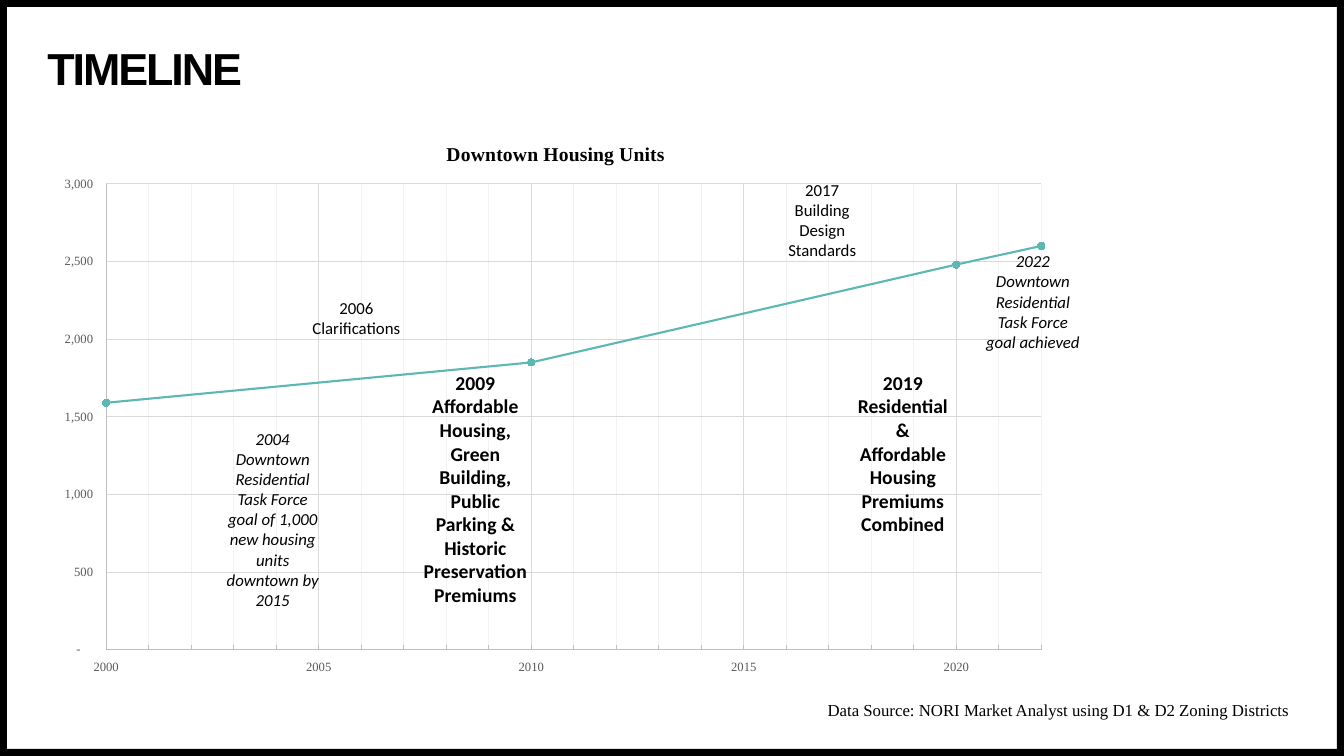
from pptx import Presentation
from pptx.chart.data import XyChartData
from pptx.dml.color import RGBColor
from pptx.enum.chart import XL_CHART_TYPE, XL_MARKER_STYLE, XL_TICK_LABEL_POSITION, XL_TICK_MARK
from pptx.enum.shapes import MSO_SHAPE
from pptx.enum.text import MSO_ANCHOR, PP_ALIGN
from pptx.oxml import parse_xml
from pptx.oxml.ns import nsdecls, qn
from pptx.util import Inches, Pt

COLORS = {
    "ink": "000000", "paper": "FFFFFF", "teal": "5CB8B3", "label": "595959",
    "axis": "BFBFBF", "grid": "D9D9D9", "minor_grid": "F2F2F2",
}
SERIF = "Times New Roman"
UNITS = [(2000, 1590), (2010, 1850), (2020, 2480), (2022, 2600)]

# Box, point size, bold, italic, paragraphs
MILESTONES = [
    ((2.97, 2.9, 1.13, 0.5), 12, False, False, ["2006", "Clarifications"]),
    ((4.1, 3.63, 1.23, 2.46), 14, True, False,
     ["2009", "Affordable Housing, Green Building, Public Parking & Historic Preservation",
      "Premiums"]),
    ((7.59, 1.73, 1.13, 0.91), 12, False, False, ["2017", "Building Design Standards"]),
    ((8.34, 3.63, 1.23, 1.75), 14, True, False,
     ["2019", "Residential & Affordable Housing", "Premiums", "Combined"]),
    ((2.14, 4.2, 1.13, 1.92), 12, False, True,
     ["2004", "Downtown Residential Task Force goal of 1,000 new housing units downtown by 2015"]),
    ((9.68, 2.44, 1.13, 1.31), 12, False, True,
     ["2022", "Downtown Residential Task Force goal achieved"]),
]


def color(name):
    return RGBColor.from_string(COLORS[name])


def inches(box):
    return [Inches(length) for length in box]


def style_font(font, name, size, tone="ink", bold=False, italic=False):
    font.name, font.size, font.bold, font.italic = name, Pt(size), bold, italic
    font.color.rgb = color(tone)


def style_line(line, tone, width=0.75):
    line.color.rgb = color(tone)
    line.width = Pt(width)


def add_border(page, box, thickness=0.07):
    left, top, width, height = box
    edges = [
        (left, top, width, thickness),
        (left, top + height - thickness, width, thickness),
        (left, top, thickness, height),
        (left + width - thickness, top, thickness, height),
    ]
    for edge in edges:
        bar = page.shapes.add_shape(MSO_SHAPE.RECTANGLE, *inches(edge))
        bar.shadow.inherit = False
        bar.fill.solid()
        bar.fill.fore_color.rgb = color("ink")
        bar.line.fill.background()


def add_title(page, box, text):
    title = page.shapes.title
    title.left, title.top, title.width, title.height = inches(box)
    frame = title.text_frame
    frame.margin_left = frame.margin_right = frame.margin_top = frame.margin_bottom = 0
    frame.vertical_anchor = MSO_ANCHOR.MIDDLE
    para = frame.paragraphs[0]
    para.alignment = PP_ALIGN.LEFT
    para.line_spacing = 0.9
    span = para.add_run()
    span.text = text
    style_font(span.font, "Arial", 32, bold=True)
    span._r.get_or_add_rPr().set("spc", "-150")


def add_text(page, box, lines, font, size, bold=False, italic=False, align=PP_ALIGN.CENTER):
    frame = page.shapes.add_textbox(*inches(box)).text_frame
    frame.word_wrap = True
    for index, line in enumerate(lines):
        para = frame.paragraphs[0] if index == 0 else frame.add_paragraph()
        para.alignment = align
        span = para.add_run()
        span.text = line
        style_font(span.font, font, size, bold=bold, italic=italic)


def layout_xml(target, **lengths):
    """Fixed layout in fractions of the chart area."""
    modes = "".join(f'<c:{axis}Mode val="edge"/>' for axis in "xy")
    values = "".join(f'<c:{key} val="{value}"/>' for key, value in lengths.items())
    return parse_xml(f'<c:layout {nsdecls("c")}><c:manualLayout>{target}{modes}{values}'
                     "</c:manualLayout></c:layout>")


def set_layout(parent, position, layout):
    for old in parent.findall(layout.tag):
        parent.remove(old)
    parent.insert(position, layout)


def add_minor_grid(axis, tone):
    axis.has_minor_gridlines = True
    axis._element.find(qn("c:minorGridlines")).append(parse_xml(
        f'<c:spPr {nsdecls("c", "a")}><a:ln w="{Pt(0.75)}"><a:solidFill>'
        f'<a:srgbClr val="{COLORS[tone]}"/></a:solidFill></a:ln></c:spPr>'))


def style_axis(axis, low, high, step, number_format):
    axis.minimum_scale, axis.maximum_scale, axis.major_unit = low, high, step
    axis.major_tick_mark = axis.minor_tick_mark = XL_TICK_MARK.NONE
    axis.tick_label_position = XL_TICK_LABEL_POSITION.LOW
    axis.has_major_gridlines = True
    style_line(axis.major_gridlines.format.line, "grid")
    style_line(axis.format.line, "axis")
    style_font(axis.tick_labels.font, SERIF, 9, "label")
    axis.tick_labels.number_format = number_format
    axis.tick_labels.number_format_is_linked = False


def add_housing_chart(page, box):
    data = XyChartData()
    points = data.add_series("Series 1")
    for year, units in UNITS:
        points.add_data_point(year, units)
    chart = page.shapes.add_chart(XL_CHART_TYPE.XY_SCATTER_LINES, *inches(box), data).chart
    chart.has_legend = False
    style_font(chart.font, SERIF, 10)

    # Heading
    chart.has_title = True
    heading = chart.chart_title
    span = heading.text_frame.paragraphs[0].add_run()
    span.text = "Downtown Housing Units"
    style_font(span.font, SERIF, 14, bold=True)
    set_layout(heading._element, 1, layout_xml("", x=0.39, y=0.04))

    # Axes
    years, units = chart.category_axis, chart.value_axis
    style_axis(years, 2000, 2022, 5, "General")
    years.minor_unit = 1
    add_minor_grid(years, "minor_grid")
    years.minor_tick_mark = XL_TICK_MARK.INSIDE
    style_axis(units, 0, 3000, 500, '#,##0_);(#,##0);"-"??_)')
    plot_area = chart._chartSpace.chart.plotArea
    set_layout(plot_area, 0, layout_xml('<c:layoutTarget val="inner"/>',
                                        x=0.058, y=0.122, w=0.922, h=0.824))

    # Line and markers
    plot = chart.plots[0]
    plot.vary_by_categories = False
    series = plot.series[0]
    series.smooth = False
    style_line(series.format.line, "teal", 1.5)
    series.marker.style = XL_MARKER_STYLE.CIRCLE
    series.marker.size = 5
    series.marker.format.fill.solid()
    series.marker.format.fill.fore_color.rgb = color("teal")
    style_line(series.marker.format.line, "teal")


def main():
    deck = Presentation()
    deck.slide_width, deck.slide_height = Inches(13.33), Inches(7.5)
    page = deck.slides.add_slide(deck.slide_layouts[5])
    page.background.fill.solid()
    page.background.fill.fore_color.rgb = color("paper")

    add_border(page, (0, 0, 13.33, 7.5))
    add_housing_chart(page, (0.47, 1.14, 10.06, 5.61))
    add_title(page, (0.47, 0.47, 10.06, 0.47), "TIMELINE")
    for box, size, bold, italic, lines in MILESTONES:
        add_text(page, box, lines, "Calibri", size, bold, italic)
    add_text(page, (8.11, 6.89, 4.81, 0.3),
             ["Data Source: NORI Market Analyst using D1 & D2 Zoning Districts"],
             SERIF, 12, align=PP_ALIGN.LEFT)
    deck.save("out.pptx")


if __name__ == "__main__":
    main()
